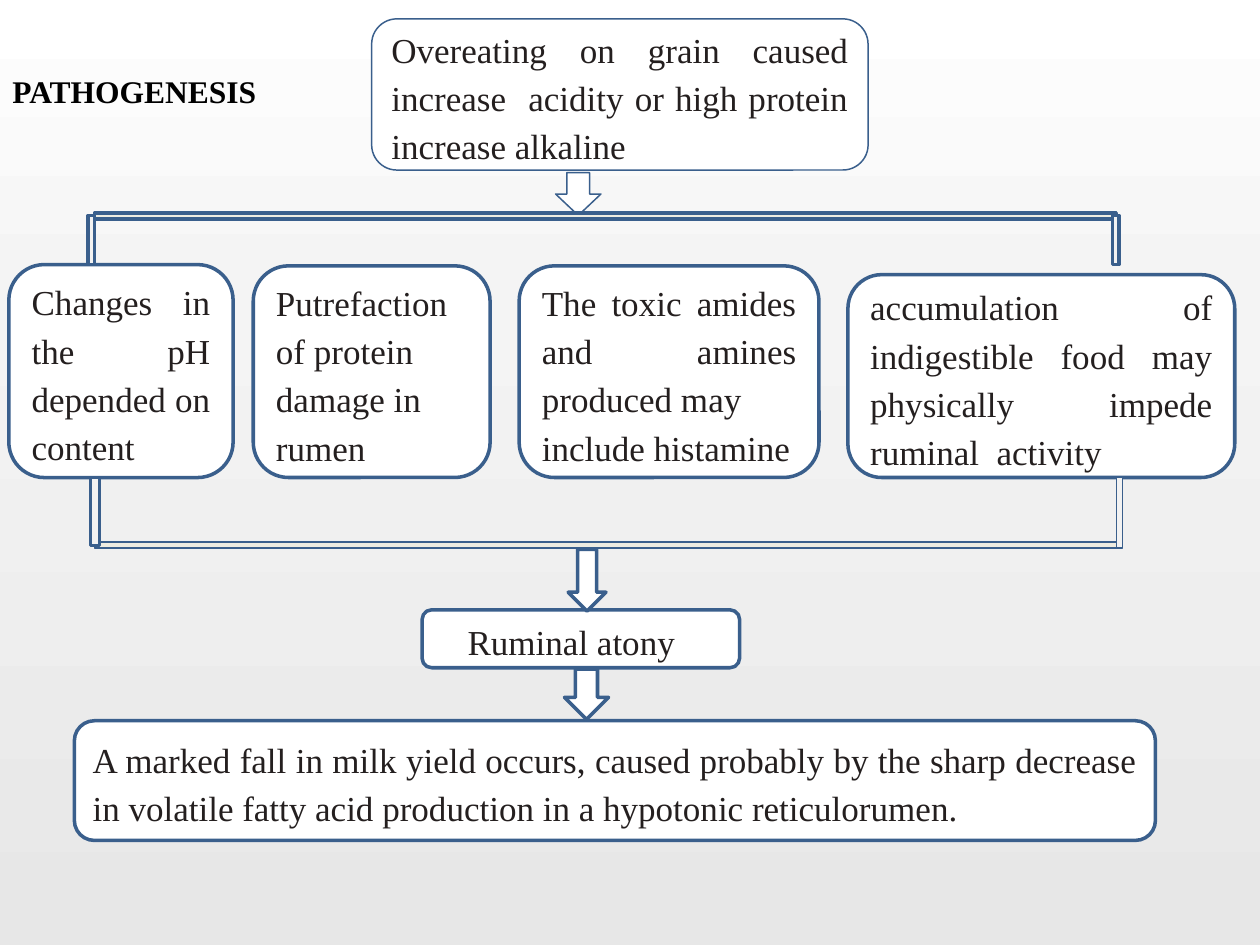
from copy import deepcopy
from dataclasses import dataclass

from pptx import Presentation
from pptx.dml.color import RGBColor
from pptx.enum.shapes import MSO_SHAPE
from pptx.enum.text import MSO_ANCHOR, PP_ALIGN
from pptx.shapes.autoshape import Shape
from pptx.slide import Slide
from pptx.util import Inches, Pt

WHITE = RGBColor(0xFF, 0xFF, 0xFF)
BLUE = RGBColor(0x3A, 0x5F, 0x8C)
INK = RGBColor(0x24, 0x1F, 0x1F)
BLACK = RGBColor(0, 0, 0)
CREAM = RGBColor(0xEE, 0xEC, 0xE1)
PALE = RGBColor(0xF2, 0xF2, 0xF2)
BACKGROUND = [(0, WHITE), (0.31, RGBColor(0xF4, 0xF4, 0xF4)), (1, RGBColor(0xE7, 0xE7, 0xE7))]
FONT = "Times New Roman"
THIN, THICK = 0.85, 2


@dataclass
class Step:
    left: float
    top: float
    width: float
    height: float
    text: str
    align: PP_ALIGN = PP_ALIGN.JUSTIFY
    line: float = THICK
    right_inset: float = 0.1


@dataclass
class Part:
    left: float
    top: float
    width: float
    height: float
    line: float = THICK
    fill: RGBColor = WHITE


STEPS = [
    Step(2.95, 0.15, 3.94, 1.2, "Overeating on grain caused increase  acidity or high protein "
         "increase alkaline", line=THIN),
    Step(0.07, 2.1, 1.78, 1.69, "Changes in the pH depended on content"),
    Step(2.01, 2.11, 1.88, 1.68, "Putrefaction of protein damage in rumen", PP_ALIGN.LEFT),
    Step(4.12, 2.11, 2.38, 1.68, "The toxic amides and amines produced may\ninclude histamine"),
    Step(6.73, 2.18, 3.07, 1.61, "accumulation of indigestible food may physically impede "
         "ruminal  activity"),
    Step(3.35, 4.84, 2.52, 0.46, "Ruminal atony", PP_ALIGN.CENTER, right_inset=0.25),
    Step(0.59, 5.72, 8.58, 0.95, "A marked fall in milk yield occurs, caused probably by the sharp "
         "decrease in volatile fatty acid production in a hypotonic reticulorumen."),
]
ARROWS = [
    Part(4.41, 1.37, 0.36, 0.34, THIN),
    Part(4.51, 4.36, 0.3, 0.49),
    Part(4.48, 5.31, 0.35, 0.4),
]
BARS = [
    # Lower bracket
    Part(0.75, 4.3, 8.14, 0.05, THIN, CREAM),
    Part(8.86, 3.79, 0.05, 0.56, THIN, PALE),
    Part(0.72, 3.79, 0.07, 0.54, THICK, PALE),
    # Upper bracket
    Part(0.75, 1.69, 8.11, 0.05, THICK, CREAM),
    Part(8.83, 1.71, 0.05, 0.39, THICK, PALE),
    Part(0.7, 1.71, 0.05, 0.39, THICK, PALE),
]


def paint_background(page: Slide) -> None:
    fill = page.background.fill
    fill.gradient()
    fill.gradient_angle = 270
    stop_list = page.element.xpath(".//a:gsLst")[0]
    stop_list.insert(1, deepcopy(stop_list[0]))
    for stop, (position, color) in zip(fill.gradient_stops, BACKGROUND):
        stop.position = position
        stop.color.rgb = color


def add_outlined(page: Slide, kind: MSO_SHAPE, part: Part | Step, fill: RGBColor) -> Shape:
    shape = page.shapes.add_shape(kind, Inches(part.left), Inches(part.top),
                                  Inches(part.width), Inches(part.height))
    shape.shadow.inherit = False
    shape.fill.solid()
    shape.fill.fore_color.rgb = fill
    shape.line.color.rgb = BLUE
    shape.line.width = Pt(part.line)
    return shape


def add_step(page: Slide, step: Step) -> None:
    box = add_outlined(page, MSO_SHAPE.ROUNDED_RECTANGLE, step, WHITE)
    frame = box.text_frame
    frame.text = step.text
    frame.word_wrap = True
    frame.vertical_anchor = MSO_ANCHOR.MIDDLE
    frame.margin_right = Inches(step.right_inset)
    for para in frame.paragraphs:
        para.alignment = step.align
        para.line_spacing = 1.15
        for span in para.runs:
            span.font.name = FONT
            span.font.size = Pt(20)
            span.font.color.rgb = INK


def add_title(page: Slide, text: str) -> None:
    box = page.shapes.add_textbox(Inches(0), Inches(0.25), Inches(2.21), Inches(0.94))
    frame = box.text_frame
    frame.text = text
    frame.word_wrap = False
    frame.vertical_anchor = MSO_ANCHOR.MIDDLE
    font = frame.paragraphs[0].runs[0].font
    font.name = FONT
    font.size = Pt(18)
    font.bold = True
    font.color.rgb = BLACK


def main() -> None:
    deck = Presentation()
    deck.slide_width, deck.slide_height = Inches(10), Inches(7.5)
    page = deck.slides.add_slide(deck.slide_layouts[6])
    paint_background(page)

    # Flow chart, with the brackets in front
    for step in STEPS:
        add_step(page, step)
    for arrow in ARROWS:
        add_outlined(page, MSO_SHAPE.DOWN_ARROW, arrow, arrow.fill)
    for bar in BARS:
        add_outlined(page, MSO_SHAPE.RECTANGLE, bar, bar.fill)

    add_title(page, "PATHOGENESIS")
    deck.save("out.pptx")


if __name__ == "__main__":
    main()
